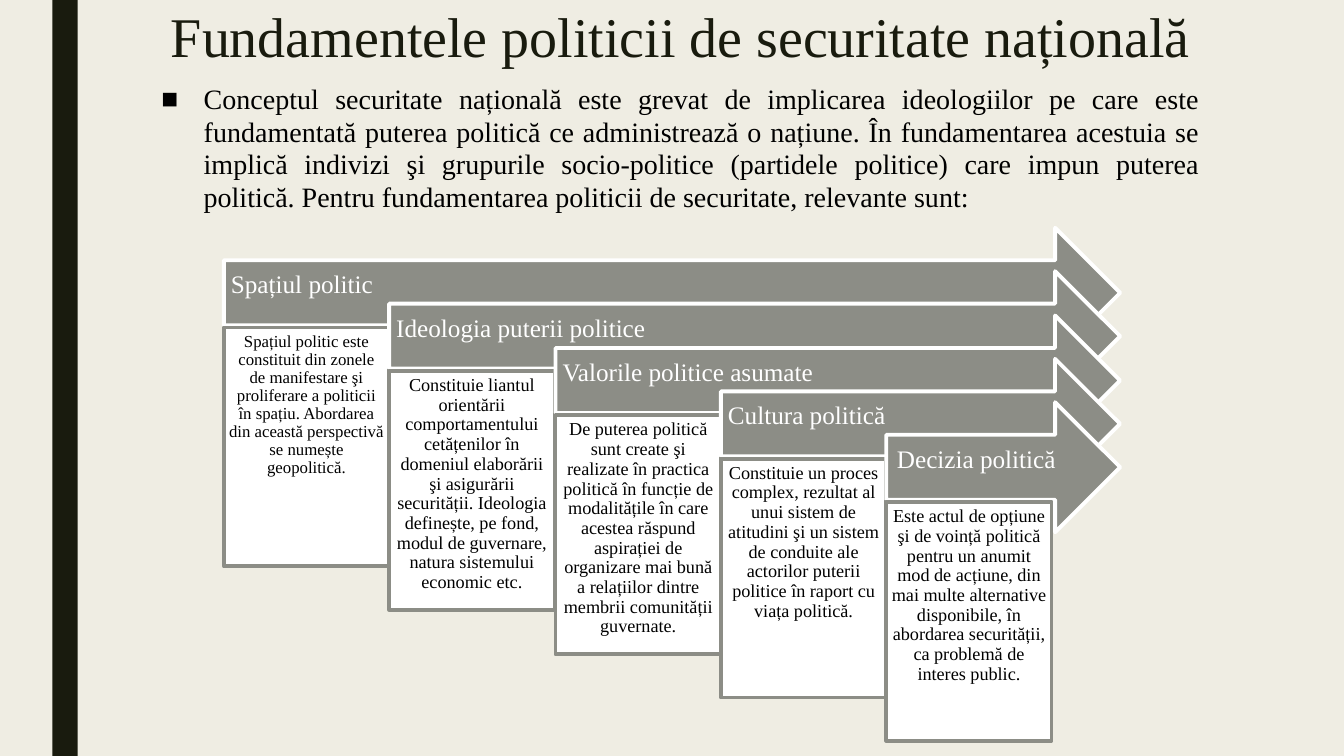
import pptx
import pptx.util
import pptx.dml.color
import pptx.enum.shapes
import pptx.enum.text
import lxml.etree

PX = 9144  # EMU per px, 100 px to the inch
FONT = "Times New Roman"
COLORS = {
    "paper": "EFEDE3",
    "dark": "191B0E",
    "gray": "8C8D86",
    "white": "FFFFFF",
    "black": "000000",
}
SHAPES = pptx.enum.shapes.MSO_SHAPE
ALIGN = pptx.enum.text.PP_ALIGN
ANCHOR = pptx.enum.text.MSO_ANCHOR

TITLE = "Fundamentele politicii de securitate națională"
INTRO = (
    "Conceptul securitate națională este grevat de implicarea ideologiilor pe care este "
    "fundamentată puterea politică ce administrează o națiune. În fundamentarea acestuia se "
    "implică indivizi şi grupurile socio-politice (partidele politice) care impun puterea "
    "politică. Pentru fundamentarea politicii de securitate, relevante sunt:"
)

# Heading, heading alignment, description, description size
STEPS = [
    ("Spațiul politic", ALIGN.LEFT,
     "Spațiul politic este constituit din zonele de manifestare şi proliferare a politicii "
     "în spațiu. Abordarea din această perspectivă se numește geopolitică.", 12),
    ("Ideologia puterii politice", ALIGN.LEFT,
     "Constituie liantul orientării comportamentului cetățenilor în domeniul elaborării şi "
     "asigurării securității. Ideologia definește, pe fond, modul de guvernare, natura "
     "sistemului economic etc.", 13),
    ("Valorile politice asumate", ALIGN.LEFT,
     "De puterea politică sunt create şi realizate în practica politică în funcție de "
     "modalitățile în care acestea răspund aspirației de organizare mai bună a relațiilor "
     "dintre membrii comunității guvernate.", 13),
    ("Cultura politică", ALIGN.LEFT,
     "Constituie un proces complex, rezultat al unui sistem de atitudini şi un sistem de "
     "conduite ale actorilor puterii politice în raport cu viața politică.", 13),
    ("Decizia politică", ALIGN.CENTER,
     "Este actul de opțiune şi de voință politică pentru un anumit mod de acțiune, din mai "
     "multe alternative disponibile, în abordarea securității, ca problemă de interes "
     "public.", 13),
]

# Staircase geometry in px
FIRST_LEFT, FIRST_TOP = 222, 226
STEP_X, STEP_Y = 164.3, 43.3
ARROW_RIGHT, ARROW_HEIGHT = 1111, 129
BOX_DROP, BOX_WIDTH, BOX_HEIGHT = 99, 164, 237


def px(length):
    return pptx.util.Emu(length * PX)


def color(name):
    return pptx.dml.color.RGBColor.from_string(COLORS[name])


def place(shape, left, top, width, height):
    shape.left, shape.top = px(left), px(top)
    shape.width, shape.height = px(width), px(height)


def write(shape, text, size, color_name, align, anchor, spacing, insets=(10, 5, 10, 5)):
    frame = shape.text_frame
    frame.word_wrap = True
    frame.auto_size = pptx.enum.text.MSO_AUTO_SIZE.NONE
    frame.vertical_anchor = anchor
    frame.margin_left, frame.margin_top, frame.margin_right, frame.margin_bottom = map(px, insets)
    para = frame.paragraphs[0]
    para.text = text
    para.alignment = align
    para.line_spacing = spacing
    para.space_before = pptx.util.Pt(0)
    para.font.name = FONT
    para.font.size = pptx.util.Pt(size)
    para.font.color.rgb = color(color_name)
    return para


def add_bullet(shape, character, indent):
    properties = shape.text_frame.paragraphs[0]._p.get_or_add_pPr()
    properties.set("marL", str(px(indent)))
    properties.set("indent", str(px(-indent)))
    for tag, attribute, value in (("buFont", "typeface", FONT), ("buChar", "char", character)):
        bullet = lxml.etree.SubElement(properties, pptx.oxml.ns.qn("a:" + tag))
        bullet.set(attribute, value)


def add_block(page, kind, left, top, width, height, fill, line=None):
    shape = page.shapes.add_shape(kind, px(left), px(top), px(width), px(height))
    shape.shadow.inherit = False
    shape.fill.solid()
    shape.fill.fore_color.rgb = color(fill)
    if line:
        shape.line.color.rgb = color(line)
        shape.line.width = pptx.util.Pt(2.75)
    else:
        shape.line.fill.background()
    return shape


def add_step(page, index, heading, heading_align, description, size):
    left = FIRST_LEFT + round(STEP_X * index)
    top = FIRST_TOP + round(STEP_Y * index)
    arrow = add_block(page, SHAPES.RIGHT_ARROW, left, top, ARROW_RIGHT - left, ARROW_HEIGHT,
                      "gray", "white")
    write(arrow, heading, 18, "white", heading_align, ANCHOR.MIDDLE, 0.9, (7, 7, 28, 21))
    box = add_block(page, SHAPES.RECTANGLE, left, top + BOX_DROP, BOX_WIDTH, BOX_HEIGHT,
                    "white", "gray")
    write(box, description, size, "black", ALIGN.CENTER, ANCHOR.TOP, 0.9, (5, 5, 5, 5))


def main():
    deck = pptx.Presentation()
    deck.slide_width, deck.slide_height = px(1333), px(750)
    page = deck.slides.add_slide(deck.slide_layouts[1])

    # Background and side bar
    page.background.fill.solid()
    page.background.fill.fore_color.rgb = color("paper")
    add_block(page, SHAPES.RECTANGLE, 52, 0, 25, 750, "dark")

    # Title and introduction
    title, body = page.placeholders
    place(title, 150, 0, 1050, 78)
    write(title, TITLE, 40, "dark", ALIGN.CENTER, ANCHOR.MIDDLE, 0.89)
    place(body, 150, 78, 1050, 141)
    add_bullet(body, "■", 42)
    write(body, INTRO, 20, "black", ALIGN.JUSTIFY, ANCHOR.TOP, 0.97)

    # Staircase of arrows with descriptions
    for index, step in enumerate(STEPS):
        add_step(page, index, *step)

    deck.save("out.pptx")


if __name__ == "__main__":
    main()
